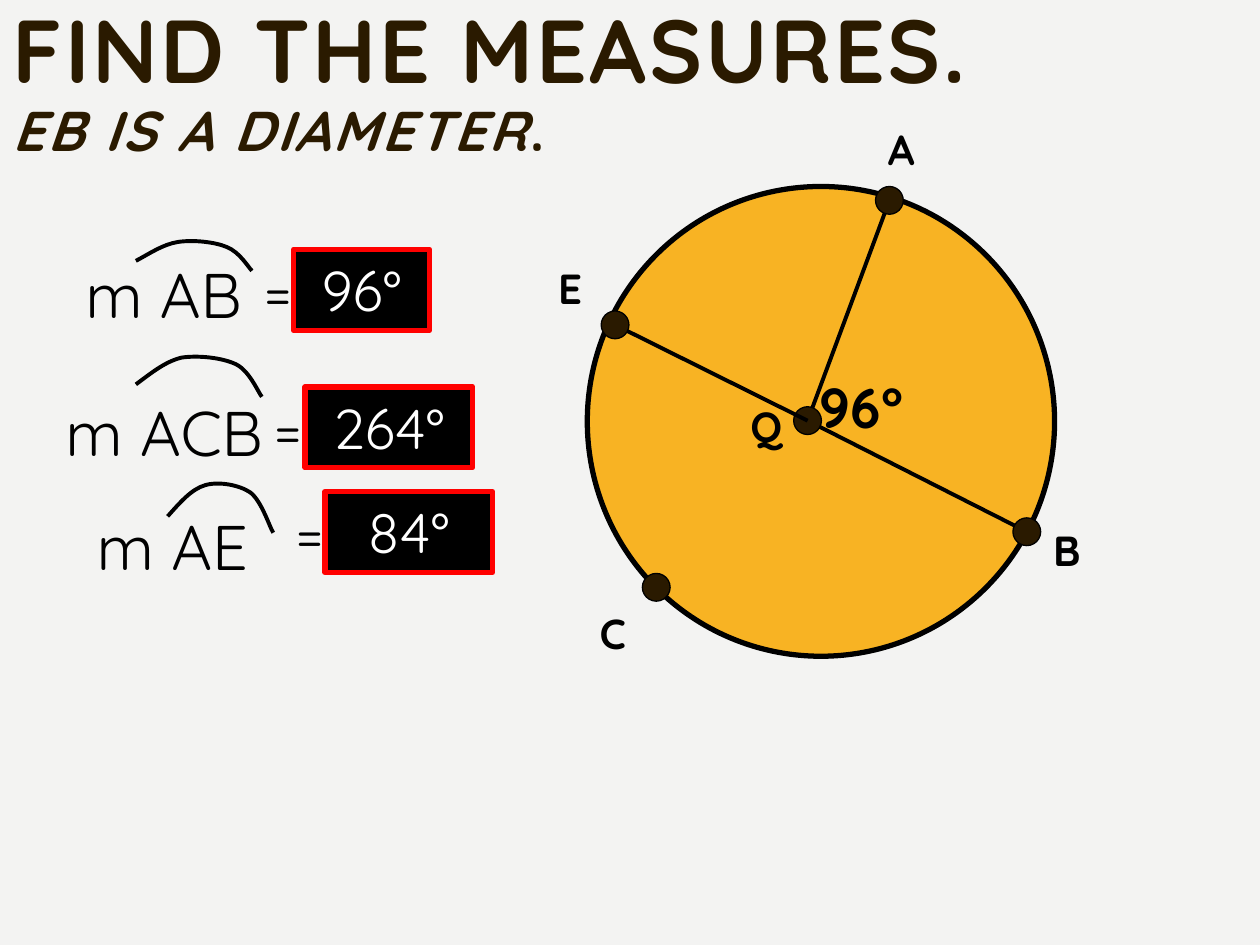
import pptx
import pptx.util
import pptx.dml.color
import pptx.enum.shapes
import pptx.enum.text
import pptx.oxml
import pptx.oxml.ns

Cm, Pt = pptx.util.Cm, pptx.util.Pt
SHAPE = pptx.enum.shapes.MSO_SHAPE
ALIGN = pptx.enum.text.PP_ALIGN
ANCHOR = pptx.enum.text.MSO_ANCHOR
qn = pptx.oxml.ns.qn

COLORS = {"paper": "F3F3F2", "brown": "2A1A00", "black": "000000",
          "white": "FFFFFF", "red": "FF0000", "gold": "F8B323"}
FONT = "Quicksand"

# Content; all positions in centimetres
TITLE = [("FIND THE MEASURES.", {"size": Pt(51)}),
         ("\v", {"size": Pt(51)}),
         ("EB IS A DIAMETER", {"size": Pt(32), "italic": True}),
         (".", {"size": Pt(32), "italic": False})]

# Arc points: start, then three Bezier points per segment
EQUATIONS = [
    {"name": "m AB", "name_box": (1.47, 5.03, 4.01, 1.78),
     "equals": (5.08, 5.03), "answer": "96°", "answer_x": 5.92, "answer_w": 2.74,
     "arc": [(2.74, 5.26), (3.02, 5.11), (3.28, 4.93), (3.58, 4.88), (3.89, 4.83),
             (4.34, 4.88), (4.57, 4.98), (4.83, 5.08), (5, 5.38), (5.08, 5.46)]},
    {"name": "m ACB", "name_box": (1.07, 7.8, 5.28, 1.78),
     "equals": (5.28, 7.8), "answer": "264°", "answer_x": 6.15, "answer_w": 3.38,
     "arc": [(2.74, 7.75), (3.05, 7.52), (3.33, 7.29), (3.66, 7.21), (3.99, 7.16),
             (4.47, 7.21), (4.75, 7.34), (5.03, 7.47), (5.21, 7.92), (5.28, 8)]},
    {"name": "m AE", "name_box": (1.7, 10.11, 4.01, 1.78),
     "equals": (5.72, 9.91), "answer": "84°", "answer_x": 6.55, "answer_w": 3.38,
     "arc": [(3.38, 10.41), (3.63, 10.13), (3.86, 9.86), (4.14, 9.78), (4.42, 9.7),
             (4.83, 9.78), (5.05, 9.93), (5.28, 10.11), (5.44, 10.64), (5.51, 10.74)]},
]

CIRCLE = (11.84, 3.76, 9.42, 9.47)
CENTER = (16.28, 8.48)
DOT = 0.56
# Name, dot centre, label corner, has a radius
POINTS = [("A", (17.93, 4.04), (17.65, 2.36), True),
          ("B", (20.7, 10.72), (20.98, 10.44), True),
          ("Q", CENTER, (14.88, 7.95), False),
          ("C", (13.23, 11.84), (11.84, 12.12), False),
          ("E", (12.4, 6.55), (11, 5.16), True)]
ANGLE = ("96°", (16.28, 7.39, 3.05, 2.13))


def rgb(name):
    return pptx.dml.color.RGBColor.from_string(COLORS[name])


def add_run(p, text, color, **fmt):
    r = p.add_run()
    r.text = text
    for key, value in {"name": FONT, **fmt}.items():
        setattr(r.font, key, value)
    r.font.color.rgb = rgb(color)
    return r


def add_text(slide, text, box, size, bold=False):
    tf = slide.shapes.add_textbox(*map(Cm, box)).text_frame
    tf.word_wrap = True
    add_run(tf.paragraphs[0], text, "black", size=Pt(size), bold=bold)


def add_shape(slide, kind, box, fill, line, width):
    sp = slide.shapes.add_shape(kind, *map(Cm, box))
    sp.shadow.inherit = False
    sp.fill.solid()
    sp.fill.fore_color.rgb = rgb(fill)
    sp.line.color.rgb = rgb(line)
    sp.line.width = Pt(width)
    return sp


def add_radius(slide, end):
    cn = slide.shapes.add_connector(pptx.enum.shapes.MSO_CONNECTOR.STRAIGHT,
                                    *map(Cm, CENTER + end))
    cn.line.color.rgb = rgb("black")
    cn.line.width = Pt(2.25)
    cn._element.spPr.append(pptx.oxml.parse_xml(
        '<a:effectLst xmlns:a="http://schemas.openxmlformats.org/drawingml/2006/main"/>'))


def add_arc(slide, points):
    pts = [(Cm(x), Cm(y)) for x, y in points]
    fb = slide.shapes.build_freeform(*pts[0])
    fb.add_line_segments(pts[1:], close=False)
    sp = fb.convert_to_shape()
    sp.shadow.inherit = False
    sp.fill.background()
    sp.line.color.rgb = rgb("black")
    sp.line.width = Pt(2.25)
    # Every three line segments become one cubic curve
    segments = list(sp._element.iter(qn("a:lnTo")))
    for i in range(0, len(segments), 3):
        curve, *rest = segments[i:i + 3]
        for seg in rest:
            curve.append(seg[0])
            seg.getparent().remove(seg)
        curve.tag = qn("a:cubicBezTo")


def add_title(slide):
    sp = slide.shapes.title
    sp.left, sp.top, sp.width, sp.height = map(Cm, (0, 0, 22.86, 3.76))
    tf = sp.text_frame
    tf.word_wrap = True
    tf.vertical_anchor = ANCHOR.TOP
    p = tf.paragraphs[0]
    p.alignment = ALIGN.LEFT
    p.line_spacing = 0.9
    for text, fmt in TITLE:
        if text == "\v":
            p.add_line_break()
            continue
        r = add_run(p, text, "brown", bold=True, **fmt)
        r.font._element.set("spc", "150")


def add_equation(slide, eq):
    add_text(slide, eq["name"], eq["name_box"], 36)
    add_arc(slide, eq["arc"])
    x, y = eq["equals"]
    add_text(slide, "=", (x, y, 1.5, 1.6), 32)
    box = (eq["answer_x"], y, eq["answer_w"], 1.63)
    sp = add_shape(slide, SHAPE.RECTANGLE, box, "black", "red", 3)
    tf = sp.text_frame
    tf.vertical_anchor = ANCHOR.TOP
    p = tf.paragraphs[0]
    p.alignment = ALIGN.CENTER
    add_run(p, eq["answer"], "white", size=Pt(32))


def add_diagram(slide):
    add_shape(slide, SHAPE.OVAL, CIRCLE, "gold", "black", 3)
    for name, (x, y), label, has_radius in POINTS:
        if has_radius:
            add_radius(slide, (x, y))
        add_shape(slide, SHAPE.OVAL, (x - DOT / 2, y - DOT / 2, DOT, DOT),
                  "brown", "black", 0.75)
        add_text(slide, name, label + (1.65, 1.68), 24, bold=True)
    add_text(slide, *ANGLE, 32, bold=True)


def main():
    prs = pptx.Presentation()
    prs.slide_width, prs.slide_height = Cm(25.4), Cm(19.05)
    slide = prs.slides.add_slide(prs.slide_layouts[5])
    slide.background.fill.solid()
    slide.background.fill.fore_color.rgb = rgb("paper")
    add_title(slide)
    add_diagram(slide)
    for eq in EQUATIONS:
        add_equation(slide, eq)
    prs.save("out.pptx")


if __name__ == "__main__":
    main()
